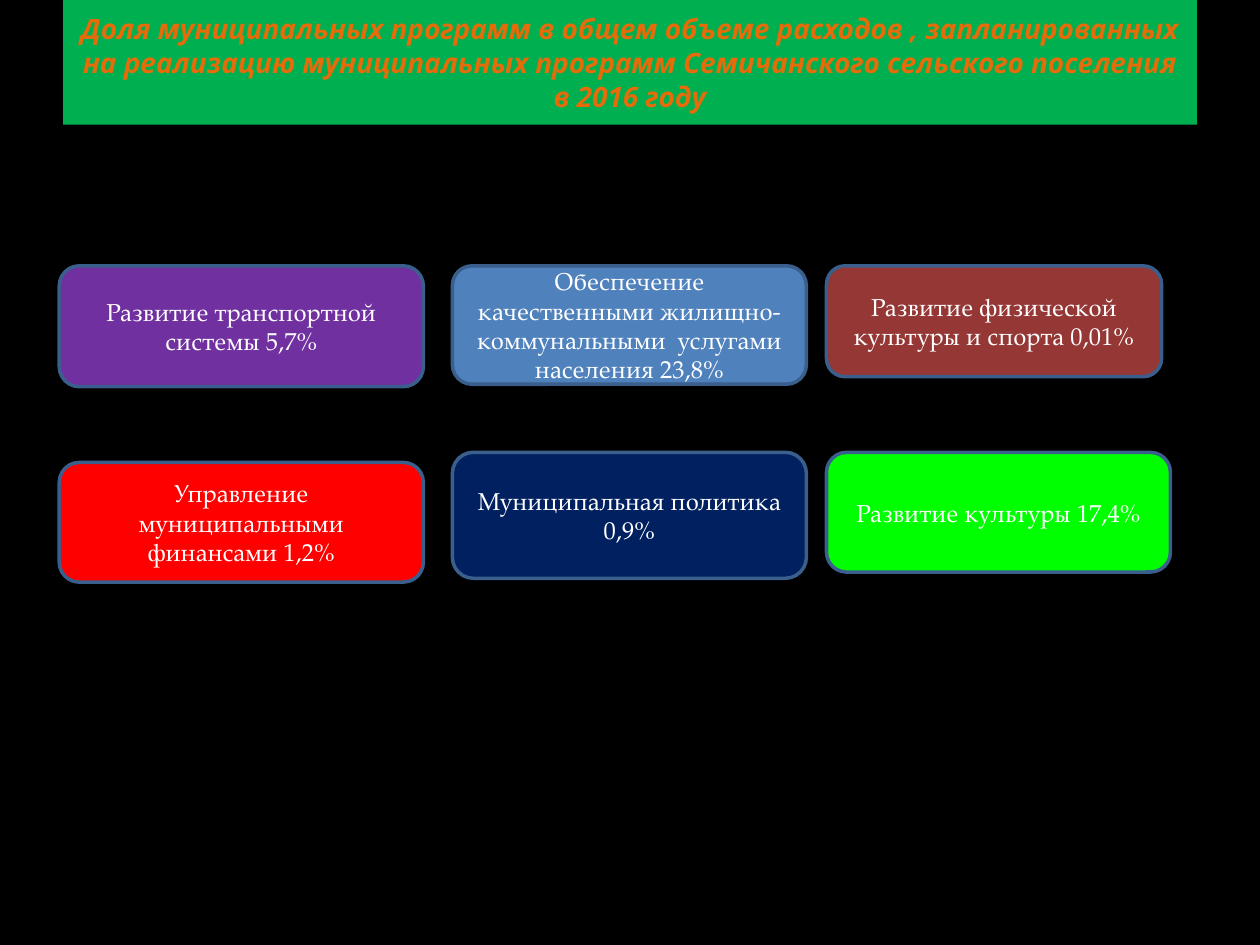
from dataclasses import dataclass

from pptx import Presentation
from pptx.dml.color import RGBColor
from pptx.enum.shapes import MSO_SHAPE
from pptx.enum.text import MSO_ANCHOR, MSO_AUTO_SIZE, PP_ALIGN
from pptx.util import Inches, Pt


@dataclass(frozen=True)
class Theme:
    background: str = "000000"
    banner: str = "00B050"
    heading: str = "E46C0A"
    outline: str = "3A5F8C"
    label: str = "FFFFFF"
    heading_font: str = "Open Sans"
    label_font: str = "TeX Gyre Pagella"
    heading_size: int = 16
    label_size: int = 14
    outline_width: int = 2


THEME = Theme()
HEADING = (
    "Доля муниципальных программ в общем объеме расходов , запланированных "
    "на реализацию муниципальных программ Семичанского сельского поселения в 2016 году"
)
LEFT, MIDDLE, RIGHT = 0.47, 3.59, 6.56
UPPER, LOWER = 2.11, 3.59
PROGRAMS = [
    ("Развитие транспортной системы 5,7%", "7030A0", (LEFT, UPPER, 2.89, 0.96)),
    ("Управление муниципальными финансами 1,2%", "FF0000", (LEFT, 3.67, 2.89, 0.95)),
    ("Обеспечение качественными жилищно-коммунальными  услугами населения 23,8%",
     "4F81BD", (MIDDLE, UPPER, 2.81, 0.94)),
    ("Развитие культуры 17,4%", "00FF00", (RIGHT, LOWER, 2.73, 0.95)),
    ("Развитие физической культуры и спорта 0,01%", "953735", (RIGHT, UPPER, 2.66, 0.88)),
    ("Муниципальная политика 0,9%", "002060", (MIDDLE, LOWER, 2.81, 1)),
]


def paint(fill, color):
    fill.solid()
    fill.fore_color.rgb = RGBColor.from_string(color)


def write_text(shape, text, color, **font_format):
    frame = shape.text_frame
    frame.word_wrap = True
    frame.auto_size = MSO_AUTO_SIZE.NONE
    frame.vertical_anchor = MSO_ANCHOR.MIDDLE
    paragraph = frame.paragraphs[0]
    paragraph.alignment = PP_ALIGN.CENTER
    run = paragraph.add_run()
    run.text = text
    run.font.color.rgb = RGBColor.from_string(color)
    for attribute, value in font_format.items():
        setattr(run.font, attribute, value)


def add_heading(slide):
    heading = slide.shapes.title
    bounds = {"left": 0.5, "top": 0, "width": 9, "height": 0.99}
    for attribute, value in bounds.items():
        setattr(heading, attribute, Inches(value))
    paint(heading.fill, THEME.banner)
    write_text(heading, HEADING, THEME.heading, name=THEME.heading_font,
               size=Pt(THEME.heading_size), bold=True, italic=True)


def add_program(slide, text, color, bounds):
    card = slide.shapes.add_shape(MSO_SHAPE.ROUNDED_RECTANGLE, *map(Inches, bounds))
    card.shadow.inherit = False
    paint(card.fill, color)
    paint(card.line.fill, THEME.outline)
    card.line.width = Pt(THEME.outline_width)
    write_text(card, text, THEME.label, name=THEME.label_font, size=Pt(THEME.label_size))


def main():
    deck = Presentation()
    deck.slide_width, deck.slide_height = Inches(10), Inches(7.5)
    slide = deck.slides.add_slide(deck.slide_layouts[5])
    paint(slide.background.fill, THEME.background)
    add_heading(slide)
    for program in PROGRAMS:
        add_program(slide, *program)
    deck.save("out.pptx")


if __name__ == "__main__":
    main()
